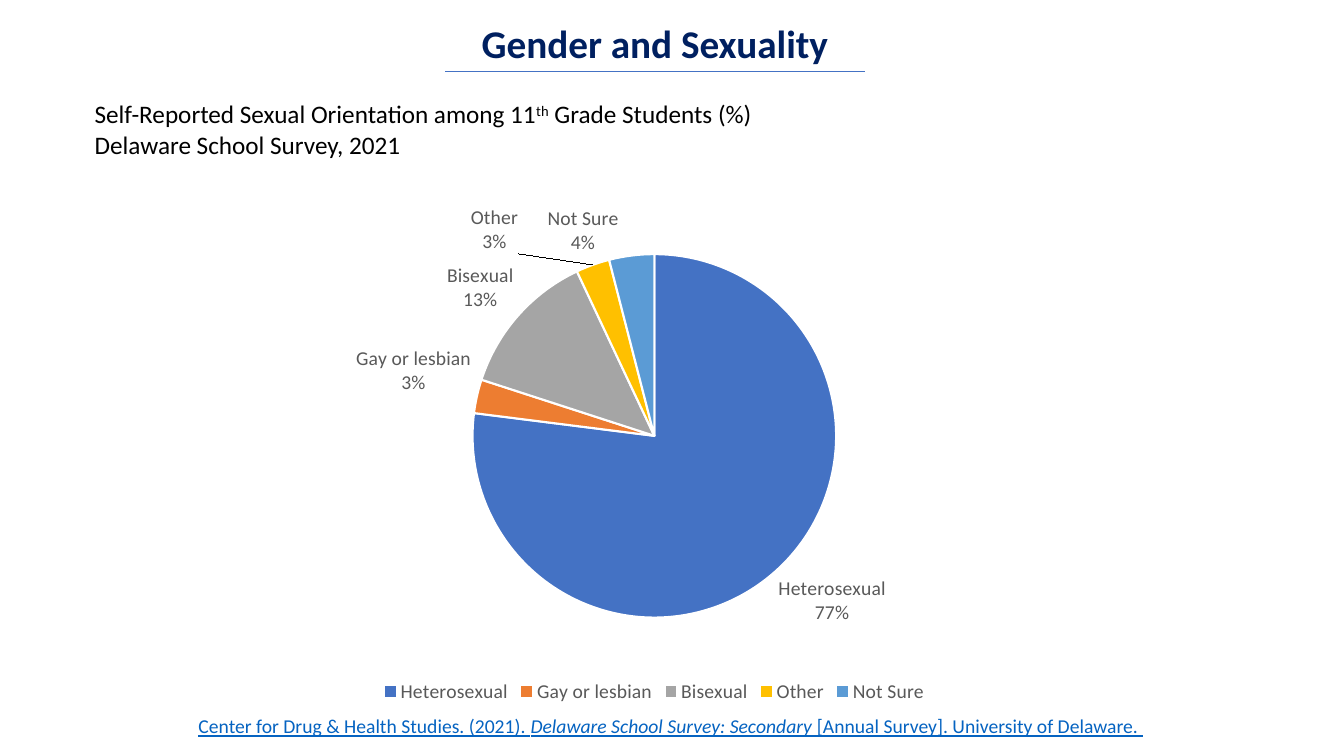
from copy import deepcopy

from lxml import etree
from pptx import Presentation
from pptx.chart.data import CategoryChartData
from pptx.dml.color import RGBColor
from pptx.enum.chart import XL_CHART_TYPE, XL_LABEL_POSITION, XL_LEGEND_POSITION
from pptx.enum.shapes import MSO_CONNECTOR
from pptx.enum.text import MSO_AUTO_SIZE, PP_ALIGN
from pptx.oxml import parse_xml
from pptx.oxml.ns import nsdecls, qn
from pptx.util import Inches, Pt

PIE = XL_CHART_TYPE.PIE
OUTSIDE = XL_LABEL_POSITION.OUTSIDE_END
BOTTOM = XL_LEGEND_POSITION.BOTTOM
STRAIGHT = MSO_CONNECTOR.STRAIGHT
FIT_SHAPE = MSO_AUTO_SIZE.SHAPE_TO_FIT_TEXT
CENTER = PP_ALIGN.CENTER

FONT = "Calibri"
BLACK = RGBColor(0x00, 0x00, 0x00)
WHITE = RGBColor(0xFF, 0xFF, 0xFF)
NAVY = RGBColor(0x00, 0x20, 0x60)
GRAY = RGBColor(0x59, 0x59, 0x59)
LINK_BLUE = RGBColor(0x05, 0x63, 0xC1)
BLUE = RGBColor(0x44, 0x72, 0xC4)

ORIENTATIONS = [
    ("Heterosexual", 77, BLUE),
    ("Gay or lesbian", 3, RGBColor(0xED, 0x7D, 0x31)),
    ("Bisexual", 13, RGBColor(0xA5, 0xA5, 0xA5)),
    ("Other", 3, RGBColor(0xFF, 0xC0, 0x00)),
    ("Not Sure", 4, RGBColor(0x5B, 0x9B, 0xD5)),
]
LABEL_SHIFTS = {3: (-0.06, -0.01), 4: (-0.01, 0.01)}
PLOT_AREA = {"x": 0.35, "y": 0.16, "w": 0.3, "h": 0.7}


def add_text_box(page, box, wrap=True):
    shape = page.shapes.add_textbox(*map(Inches, box))
    frame = shape.text_frame
    frame.word_wrap = wrap
    frame.auto_size = FIT_SHAPE
    return frame


def add_span(para, text, size, color, bold=None, italic=None, underline=None):
    span = para.add_run()
    span.text = text
    font = span.font
    font.name, font.size = FONT, Pt(size)
    font.color.rgb = color
    font.bold, font.italic, font.underline = bold, italic, underline
    return span


def add_title(page, box):
    left, top, width, height = box
    para = add_text_box(page, box).paragraphs[0]
    para.alignment = CENTER
    add_span(para, "Gender and Sexuality", 28, NAVY, bold=True)
    middle, half, bottom = left + width / 2, 2.08, top + height
    ends = (middle - half, bottom, middle + half, bottom)
    rule = page.shapes.add_connector(STRAIGHT, *map(Inches, ends))
    rule.line.color.rgb = BLUE
    rule.line.width = Pt(0.5)
    etree.SubElement(rule._element.spPr, qn("a:effectLst"))


def add_subtitle(page, box):
    frame = add_text_box(page, box, wrap=False)
    para = frame.paragraphs[0]
    add_span(para, "Self-Reported Sexual Orientation among 11", 18, BLACK)
    suffix = add_span(para, "th", 18, BLACK)
    suffix.font._element.set("baseline", "30000")
    add_span(para, " Grade Students (%)", 18, BLACK)
    add_span(frame.add_paragraph(), "Delaware School Survey, 2021", 18, BLACK)


def add_source(page, box):
    para = add_text_box(page, box).paragraphs[0]
    para.line_spacing = 1.07
    para._p.get_or_add_pPr().set("marL", str(Inches(0.06)))
    for text, italic in [
        ("Center for Drug & Health Studies. (2021). ", False),
        ("Delaware School Survey: Secondary", True),
        (" [Annual Survey]. University of Delaware. ", False),
    ]:
        add_span(para, text, 14, LINK_BLUE, italic=italic, underline=True)


def manual_layout(values, inner=False):
    target = '<c:layoutTarget val="inner"/>' if inner else ""
    modes = "".join(f'<c:{k}Mode val="edge"/>' for k in "xy") if inner else ""
    places = "".join(f'<c:{k} val="{v}"/>' for k, v in values.items())
    return parse_xml(
        f'<c:layout {nsdecls("c")}><c:manualLayout>{target}{modes}{places}'
        "</c:manualLayout></c:layout>"
    )


def style_font(font, size, color):
    font.name, font.size = FONT, Pt(size)
    font.color.rgb = color


def style_labels(series):
    labels = series.data_labels
    labels.show_value = False
    labels.show_category_name = True
    labels.show_percentage = True
    labels.number_format = "0%"
    labels.number_format_is_linked = False
    labels.position = OUTSIDE
    style_font(labels.font, 14, GRAY)
    group = labels._element
    separator = etree.Element(qn("c:separator"))
    separator.text = "\n"
    group.find(qn("c:showBubbleSize")).addnext(separator)
    shared = [part for part in group if part.tag != qn("c:showLeaderLines")]
    for place, (index, (x, y)) in enumerate(LABEL_SHIFTS.items()):
        label = etree.Element(qn("c:dLbl"))
        etree.SubElement(label, qn("c:idx")).set("val", str(index))
        label.append(manual_layout({"x": x, "y": y}))
        label.extend(deepcopy(shared))
        group.insert(place, label)


def add_pie(page, box):
    names, values, colors = zip(*ORIENTATIONS)
    data = CategoryChartData()
    data.categories = names
    data.add_series("Series 1", values)
    chart = page.shapes.add_chart(PIE, *map(Inches, box), data).chart
    style_font(chart.font, 10, BLACK)
    chart.has_title = False
    chart.has_legend = True
    chart.legend.position = BOTTOM
    chart.legend.include_in_layout = False
    style_font(chart.legend.font, 14, GRAY)
    plot = chart.plots[0]
    plot.vary_by_categories = True
    series = plot.series[0]
    for index, color in enumerate(colors):
        slice_format = series.points[index].format
        slice_format.fill.solid()
        slice_format.fill.fore_color.rgb = color
        slice_format.line.color.rgb = WHITE
        slice_format.line.width = Pt(1.5)
    style_labels(series)
    area = chart._chartSpace.chart.plotArea
    for layout in area.findall(qn("c:layout")):
        area.remove(layout)
    area.insert(0, manual_layout(PLOT_AREA, inner=True))


def main():
    deck = Presentation()
    deck.slide_width, deck.slide_height = Inches(13.33), Inches(7.5)
    page = deck.slides.add_slide(deck.slide_layouts[6])
    add_title(page, (3.01, 0.14, 6.97, 0.57))
    add_pie(page, (0.48, 1.52, 12.02, 5.5))
    add_subtitle(page, (0.84, 0.93, 6.82, 0.71))
    add_source(page, (1.81, 7.02, 10.47, 0.34))
    deck.save("out.pptx")


if __name__ == "__main__":
    main()
